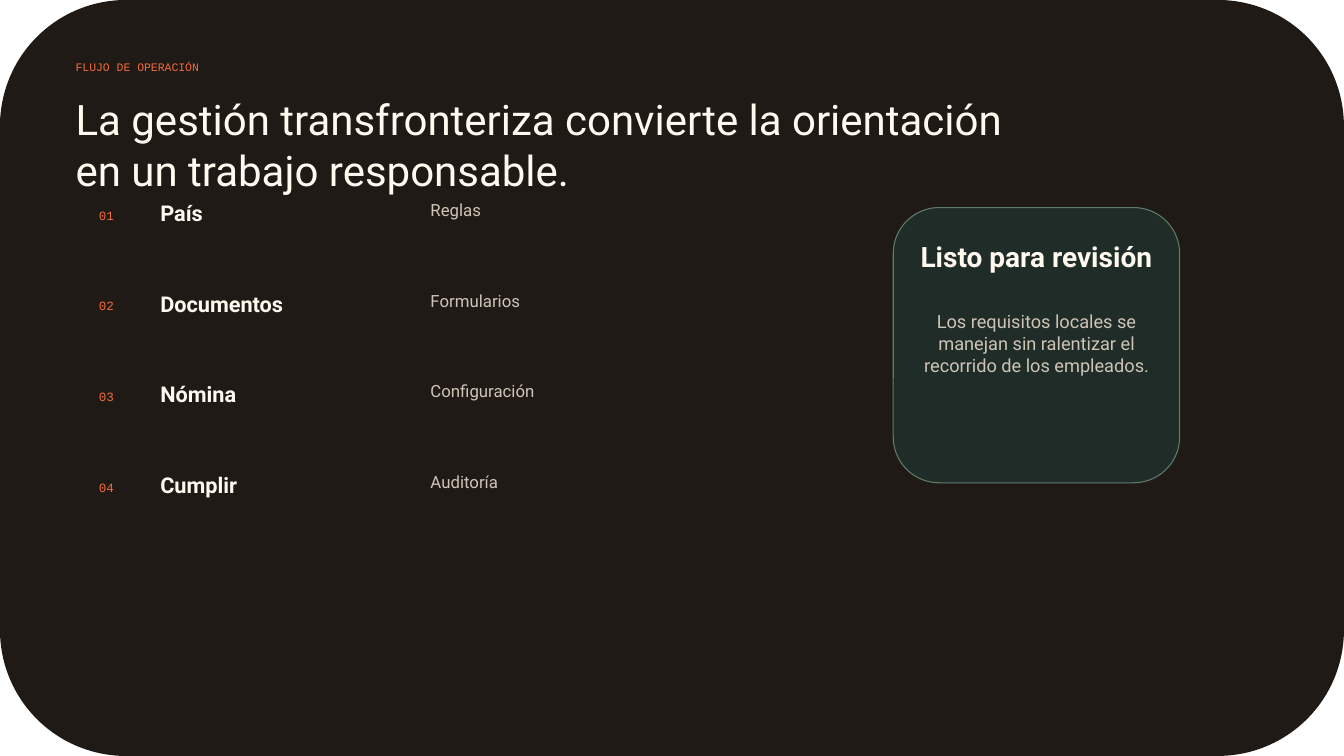
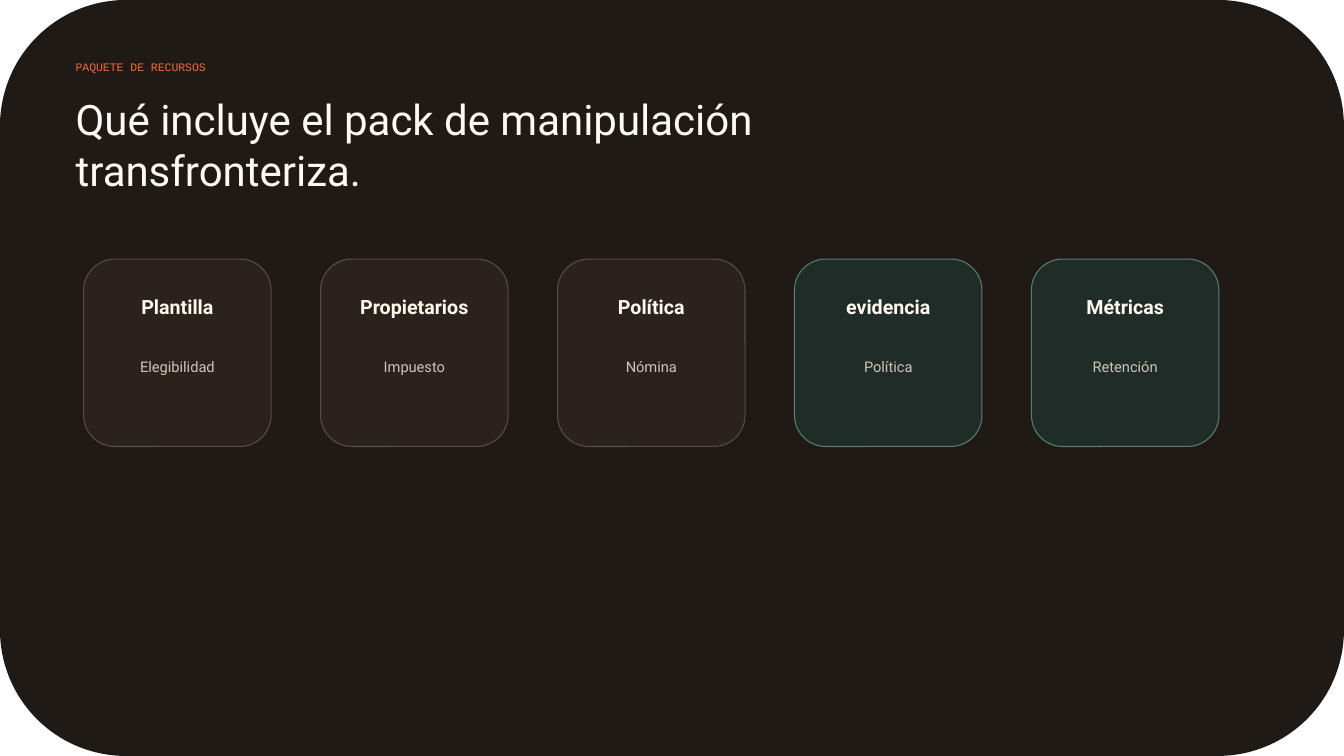
from dataclasses import dataclass

from pptx import Presentation
from pptx.dml.color import RGBColor
from pptx.enum.shapes import MSO_SHAPE as Preset
from pptx.enum.text import MSO_ANCHOR as Anchor, MSO_AUTO_SIZE as AutoSize, PP_ALIGN as Align
from pptx.shapes.autoshape import Shape
from pptx.slide import Slide
from pptx.util import Inches, Pt

SLIDE_WIDTH, SLIDE_HEIGHT = 13.33, 7.5
TITLE_ONLY = 5

WHITE = RGBColor(0xFF, 0xFF, 0xFF)
INK = RGBColor(0x20, 0x1A, 0x16)
CREAM = RGBColor(0xFF, 0xF9, 0xEF)
SAND = RGBColor(0xCF, 0xC4, 0xB8)
ORANGE = RGBColor(0xF2, 0x6B, 0x3A)
BROWN = RGBColor(0x2A, 0x22, 0x1D)
BROWN_EDGE = RGBColor(0x5B, 0x4D, 0x44)
GREEN = RGBColor(0x1F, 0x2C, 0x27)
GREEN_EDGE = RGBColor(0x5C, 0x7E, 0x6B)


@dataclass(frozen=True)
class TextStyle:
    size: float
    color: RGBColor
    font: str = "Roboto"
    bold: bool = False
    align: Align = Align.LEFT


@dataclass(frozen=True)
class Area:
    left: float
    top: float
    width: float
    height: float

    def centered(self, offset: float, width: float, height: float) -> "Area":
        """Area inside this one, centred across and offset from its top."""
        return Area(self.left + (self.width - width) / 2, self.top + offset, width, height)

    def lengths(self) -> list[Inches]:
        return [Inches(value) for value in (self.left, self.top, self.width, self.height)]


@dataclass(frozen=True)
class CardColors:
    fill: RGBColor
    edge: RGBColor


@dataclass(frozen=True)
class Step:
    name: str
    detail: str


@dataclass(frozen=True)
class Resource:
    name: str
    detail: str
    colors: CardColors


EYEBROW = TextStyle(8.2, ORANGE, font="Courier New")
TITLE = TextStyle(30, CREAM)
STEP_NUMBER = TextStyle(9, ORANGE, font="Courier New")
STEP_NAME = TextStyle(15.5, CREAM, bold=True)
STEP_DETAIL = TextStyle(12, SAND)
RESULT_NAME = TextStyle(20, CREAM, bold=True, align=Align.CENTER)
RESULT_DETAIL = TextStyle(13, SAND, align=Align.CENTER)
RESOURCE_NAME = TextStyle(14, CREAM, bold=True, align=Align.CENTER)
RESOURCE_DETAIL = TextStyle(10.5, SAND, align=Align.CENTER)

NEUTRAL_CARD = CardColors(BROWN, BROWN_EDGE)
READY_CARD = CardColors(GREEN, GREEN_EDGE)

STEPS = [
    Step("País", "Reglas"),
    Step("Documentos", "Formularios"),
    Step("Nómina", "Configuración"),
    Step("Cumplir", "Auditoría"),
]
STEP_TOP, STEP_PITCH = 1.98, 0.9

RESOURCES = [
    Resource("Plantilla", "Elegibilidad", NEUTRAL_CARD),
    Resource("Propietarios", "Impuesto", NEUTRAL_CARD),
    Resource("Política", "Nómina", NEUTRAL_CARD),
    Resource("evidencia", "Política", READY_CARD),
    Resource("Métricas", "Retención", READY_CARD),
]
RESOURCE_LEFT, RESOURCE_TOP = 0.83, 2.57
RESOURCE_SIDE, RESOURCE_PITCH = 1.86, 2.35


def fill_text(box: Shape, text: str, style: TextStyle) -> None:
    frame = box.text_frame
    frame.text = text
    frame.word_wrap = True
    frame.auto_size = AutoSize.NONE
    frame.vertical_anchor = Anchor.TOP
    frame.margin_left = frame.margin_top = frame.margin_right = frame.margin_bottom = 0
    para = frame.paragraphs[0]
    para.alignment = style.align
    font = para.runs[0].font
    font.name = style.font
    font.size = Pt(style.size)
    font.bold = style.bold
    font.color.rgb = style.color


def add_text(page: Slide, area: Area, text: str, style: TextStyle) -> None:
    fill_text(page.shapes.add_textbox(*area.lengths()), text, style)


def add_panel(page: Slide, area: Area, fill: RGBColor) -> Shape:
    """Rounded rectangle without outline or shadow."""
    panel = page.shapes.add_shape(Preset.ROUNDED_RECTANGLE, *area.lengths())
    panel.shadow.inherit = False
    panel.fill.solid()
    panel.fill.fore_color.rgb = fill
    panel.line.fill.background()
    return panel


def add_card(page: Slide, area: Area, colors: CardColors) -> None:
    card = add_panel(page, area, colors.fill)
    card.line.color.rgb = colors.edge
    card.line.width = Pt(0.75)


def add_page(deck: Presentation, eyebrow: str, title: str, title_width: float) -> Slide:
    page = deck.slides.add_slide(deck.slide_layouts[TITLE_ONLY])
    page.background.fill.solid()
    page.background.fill.fore_color.rgb = WHITE
    heading = page.shapes.title
    backdrop = add_panel(page, Area(0, 0, SLIDE_WIDTH, SLIDE_HEIGHT), INK)
    heading.element.addprevious(backdrop.element)
    area = Area(0.75, 0.93, title_width, 0.71)
    heading.left, heading.top, heading.width, heading.height = area.lengths()
    fill_text(heading, title, TITLE)
    add_text(page, Area(0.75, 0.6, 4.59, 0.28), eyebrow, EYEBROW)
    return page


def build_workflow(deck: Presentation) -> None:
    page = add_page(
        deck,
        "FLUJO DE OPERACIÓN",
        "La gestión transfronteriza convierte la orientación en un trabajo responsable.",
        title_width=9.41,
    )
    for index, step in enumerate(STEPS):
        top = STEP_TOP + index * STEP_PITCH
        add_text(page, Area(0.98, top + 0.08, 0.55, 0.24), f"{index + 1:02}", STEP_NUMBER)
        add_text(page, Area(1.59, top, 2.84, 0.28), step.name, STEP_NAME)
        add_text(page, Area(4.27, top, 3.94, 0.31), step.detail, STEP_DETAIL)

    result = Area(8.86, 2.06, 2.84, 2.73)
    add_card(page, result, READY_CARD)
    add_text(page, result.centered(0.32, 2.3, 0.46), "Listo para revisión", RESULT_NAME)
    add_text(
        page,
        result.centered(1.02, 2.3, 0.98),
        "Los requisitos locales se manejan sin ralentizar el recorrido de los empleados.",
        RESULT_DETAIL,
    )


def build_resources(deck: Presentation) -> None:
    page = add_page(
        deck,
        "PAQUETE DE RECURSOS",
        "Qué incluye el pack de manipulación transfronteriza.",
        title_width=8.31,
    )
    for index, resource in enumerate(RESOURCES):
        left = RESOURCE_LEFT + index * RESOURCE_PITCH
        area = Area(left, RESOURCE_TOP, RESOURCE_SIDE, RESOURCE_SIDE)
        add_card(page, area, resource.colors)
        add_text(page, area.centered(0.36, 1.49, 0.33), resource.name, RESOURCE_NAME)
        add_text(page, area.centered(0.98, 1.55, 0.57), resource.detail, RESOURCE_DETAIL)


def main() -> None:
    deck = Presentation()
    deck.slide_width = Inches(SLIDE_WIDTH)
    deck.slide_height = Inches(SLIDE_HEIGHT)
    build_workflow(deck)
    build_resources(deck)
    deck.save("out.pptx")


if __name__ == "__main__":
    main()
